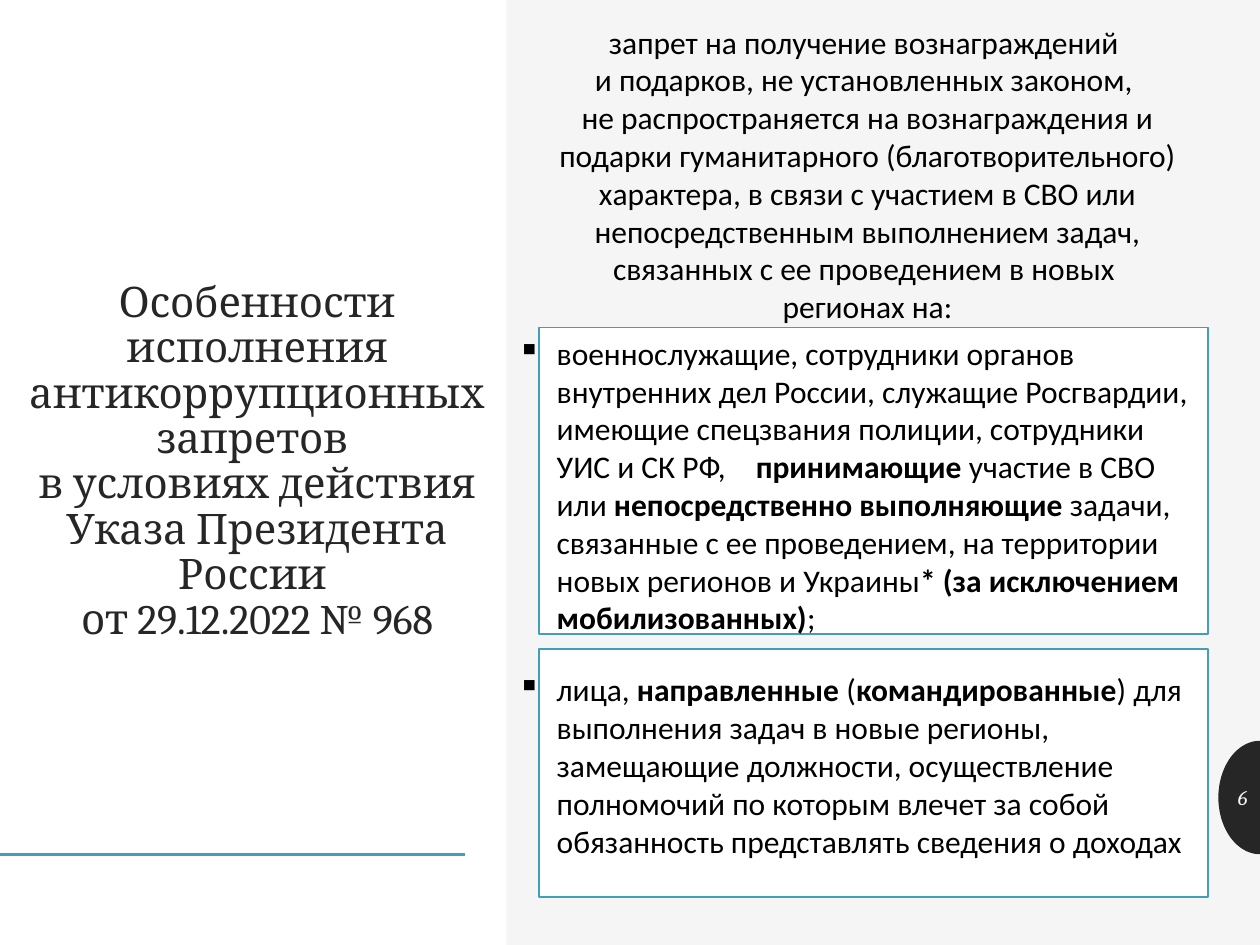
import math
from dataclasses import dataclass

from lxml import etree
from pptx import Presentation
from pptx import util as u
from pptx.dml.color import RGBColor
from pptx.enum import shapes, text
from pptx.oxml import ns


@dataclass(frozen=True)
class Theme:
    background: RGBColor = RGBColor(0xF5, 0xF5, 0xF5)
    panel: RGBColor = RGBColor(0xFF, 0xFF, 0xFF)
    accent: RGBColor = RGBColor(0x43, 0x9E, 0xB7)
    dark: RGBColor = RGBColor(0x26, 0x26, 0x26)
    body: RGBColor = RGBColor(0, 0, 0)
    heading_font: str = "Cambria"
    body_font: str = "Calibri"
    title_size: int = 24
    body_size: int = 18
    number_size: int = 12


theme = Theme()
presentation = Presentation()
presentation.slide_width = u.Inches(10)
presentation.slide_height = u.Inches(7.5)
slide = presentation.slides.add_slide(presentation.slide_layouts[6])
slide.background.fill.solid()
slide.background.fill.fore_color.rgb = theme.background


def add_text(box, paragraphs, *, font=theme.body_font, size=theme.body_size,
             color=theme.body, align=text.PP_ALIGN.LEFT, anchor=text.MSO_ANCHOR.TOP,
             italic=None, line_spacing=None, gap=0, bullet=None, indent=0, tab=None):
    """Add a text box; ** switches bold on and off, a newline breaks the line."""
    frame = slide.shapes.add_textbox(*map(u.Inches, box)).text_frame
    frame.word_wrap = True
    frame.vertical_anchor = anchor
    for index, content in enumerate(paragraphs):
        paragraph = frame.paragraphs[0] if index == 0 else frame.add_paragraph()
        paragraph.alignment = align
        paragraph.line_spacing = line_spacing
        if index and gap:
            paragraph.space_before = u.Pt(gap)
        if bullet:
            properties = paragraph._p.get_or_add_pPr()
            properties.set("marL", str(u.Inches(indent)))
            properties.set("indent", str(-u.Inches(indent)))
            etree.SubElement(properties, ns.qn("a:buChar"), char=bullet)
            if tab:
                stops = etree.SubElement(properties, ns.qn("a:tabLst"))
                etree.SubElement(stops, ns.qn("a:tab"), pos=str(u.Inches(tab)), algn="l")
        for part, passage in enumerate(content.split("**")):
            for row, words in enumerate(passage.split("\n")):
                if row:
                    paragraph.add_line_break()
                run = paragraph.add_run()
                run.text = words
                run.font.name = font
                run.font.size = u.Pt(size)
                run.font.color.rgb = color
                run.font.bold = part % 2 == 1
                run.font.italic = italic


def add_box(box, line=None):
    """Add a white rectangle, outlined when a line colour is given."""
    shape = slide.shapes.add_shape(shapes.MSO_SHAPE.RECTANGLE, *map(u.Inches, box))
    shape.shadow.inherit = False
    shape.fill.solid()
    shape.fill.fore_color.rgb = theme.panel
    if line is None:
        shape.line.fill.background()
    else:
        shape.line.color.rgb = line
        shape.line.width = u.Pt(1)


# Half-ellipse tab for the slide number at the right edge
radius_x, radius_y, center_y, steps = 0.33, 0.45, 6.33, 48
angles = [math.pi * step / steps for step in range(steps + 1)]
outline = [(u.Inches(10 - radius_x * math.sin(angle)),
            u.Inches(center_y - radius_y * math.cos(angle))) for angle in angles]
builder = slide.shapes.build_freeform(*outline[0])
builder.add_line_segments(outline[1:], close=True)
number_tab = builder.convert_to_shape()
number_tab.shadow.inherit = False
number_tab.fill.solid()
number_tab.fill.fore_color.rgb = theme.dark
number_tab.line.fill.background()
add_text((9.67, 6.13, 0.33, 0.4), ["6"], font=theme.heading_font,
         size=theme.number_size, color=theme.background, italic=True,
         align=text.PP_ALIGN.RIGHT, anchor=text.MSO_ANCHOR.MIDDLE)

# Title panel with its accent rule
add_box((0, 0, 4.02, 7.5))
rule = slide.shapes.add_connector(shapes.MSO_CONNECTOR.STRAIGHT, u.Inches(0),
                                  u.Inches(6.78), u.Inches(3.69), u.Inches(6.78))
rule.line.color.rgb = theme.accent
rule.line.width = u.Pt(2)
etree.SubElement(rule._element.spPr, ns.qn("a:effectLst"))
add_text((-0.13, 2.49, 4.34, 2.67),
         ["Особенности исполнения антикоррупционных запретов \n"
          "в условиях действия Указа Президента России \n"
          "от 29.12.2022 № 968"],
         font=theme.heading_font, size=theme.title_size, color=theme.dark,
         align=text.PP_ALIGN.CENTER, anchor=text.MSO_ANCHOR.BOTTOM, line_spacing=0.9)

# Introduction
add_text((4.11, 0.13, 5.55, 2.83),
         ["запрет на получение вознаграждений ",
          "и подарков, не установленных законом, ",
          "не распространяется на вознаграждения и подарки гуманитарного "
          "(благотворительного) характера, в связи с участием в СВО или "
          "непосредственным выполнением задач, связанных с ее проведением в новых ",
          "регионах на:"],
         align=text.PP_ALIGN.CENTER)

# Outlined cards and the list that runs across them
for top, height in ((2.6, 2.43), (5.15, 1.97)):
    add_box((4.28, top, 5.31, height), line=theme.accent)
add_text((4.01, 2.6, 5.65, 4.61),
         ["военнослужащие, сотрудники органов внутренних дел России, служащие "
          "Росгвардии, имеющие спецзвания полиции, сотрудники УИС и СК РФ,\t"
          "**принимающие** участие в СВО или **непосредственно выполняющие **задачи, "
          "связанные с ее проведением, на территории новых регионов и Украины"
          "*** (за исключением мобилизованных)**;".replace("***", "**\u2217", 1).replace("\u2217", "*"),
          "лица, **направленные** (**командированные**) для выполнения задач в новые "
          "регионы, замещающие должности, осуществление полномочий по которым влечет "
          "за собой обязанность представлять сведения о доходах"],
         bullet="▪", indent=0.31, tab=1.89, gap=19.5)

presentation.save("out.pptx")
